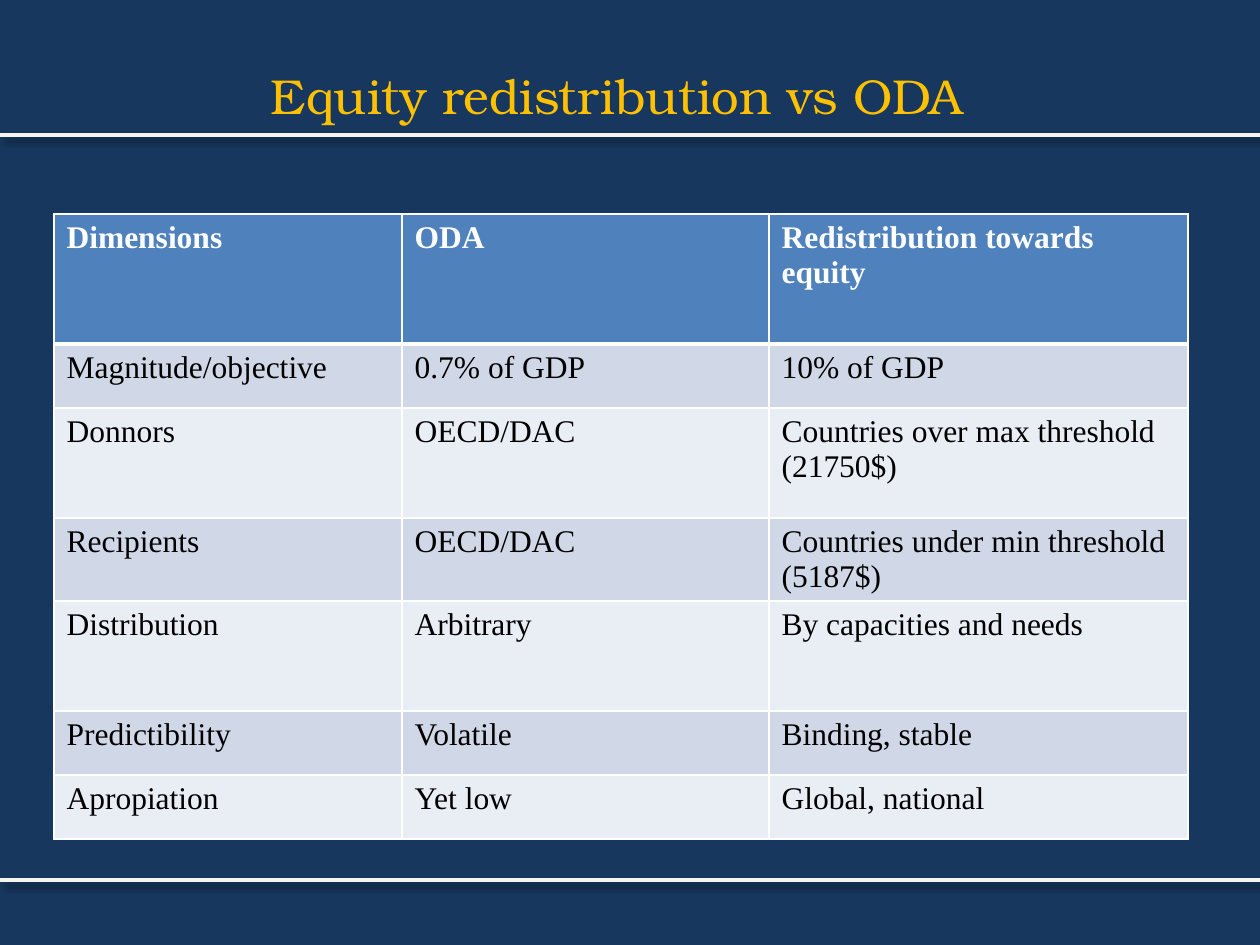
import dataclasses

import lxml.etree
import pptx
import pptx.dml.color
import pptx.enum.shapes
import pptx.enum.text
import pptx.oxml.ns
import pptx.util

RGBColor = pptx.dml.color.RGBColor
NAVY = RGBColor(0x17, 0x37, 0x5E)
IVORY = RGBColor(0xF5, 0xF4, 0xED)
GOLD = RGBColor(0xFF, 0xC0, 0x00)
WHITE = RGBColor(0xFF, 0xFF, 0xFF)
BLACK = RGBColor(0x00, 0x00, 0x00)
HEADER_BLUE = RGBColor(0x4F, 0x81, 0xBD)
BAND_DARK = RGBColor(0xD0, 0xD8, 0xE8)
BAND_LIGHT = RGBColor(0xE9, 0xED, 0xF4)

TITLE_FONT = "TeX Gyre Bonum"
TABLE_FONT = "Times New Roman"
PX_PER_INCH = 126
PAGE_WIDTH = 1260
PAGE_HEIGHT = 945
RULE_TOPS = (880, 135)
COLUMN_WIDTHS = (348, 367, 419)


@dataclasses.dataclass(frozen=True)
class TableRow:
    height: int
    texts: tuple[str, str, str]


@dataclasses.dataclass(frozen=True)
class CellStyle:
    fill: RGBColor
    color: RGBColor
    bold: bool
    top: int
    bottom: int


ROWS = (
    TableRow(130, ("Dimensions", "ODA", "Redistribution towards equity")),
    TableRow(64, ("Magnitude/objective", "0.7% of GDP", "10% of GDP")),
    TableRow(110, ("Donnors", "OECD/DAC", "Countries over max threshold (21750$)")),
    TableRow(83, ("Recipients", "OECD/DAC", "Countries under min threshold (5187$)")),
    TableRow(110, ("Distribution", "Arbitrary", "By capacities and needs")),
    TableRow(64, ("Predictibility", "Volatile", "Binding, stable")),
    TableRow(64, ("Apropiation", "Yet low", "Global, national")),
)


def px(length: int) -> pptx.util.Emu:
    return pptx.util.Emu(round(length * 914400 / PX_PER_INCH))


def add_element(parent, tag: str, **attributes):
    element = lxml.etree.SubElement(parent, pptx.oxml.ns.qn(tag))
    for name, value in attributes.items():
        element.set(name, str(value))
    return element


def add_span(para, text: str, font: str, size: int, color: RGBColor, bold: bool = False) -> None:
    span = para.add_run()
    span.text = text
    span.font.name = font
    span.font.size = pptx.util.Pt(size)
    span.font.color.rgb = color
    span.font.bold = bold


def add_rule(page, top: int) -> None:
    rule = page.shapes.add_connector(
        pptx.enum.shapes.MSO_CONNECTOR.STRAIGHT, px(0), px(top), px(PAGE_WIDTH), px(top)
    )
    rule.line.color.rgb = IVORY
    rule.line.width = pptx.util.Pt(1.75)
    effects = add_element(rule._element.spPr, "a:effectLst")
    shadow = add_element(
        effects, "a:outerShdw", blurRad=50800, dist=50800, dir=2400000, algn="tl", rotWithShape=0
    )
    color = add_element(shadow, "a:srgbClr", val=BLACK)
    add_element(color, "a:alpha", val=40000)


def write_title(page) -> None:
    title = page.shapes.title
    title.left, title.top, title.width, title.height = px(50), px(16), px(1134), px(158)
    title.text_frame.vertical_anchor = pptx.enum.text.MSO_ANCHOR.MIDDLE
    para = title.text_frame.paragraphs[0]
    para.alignment = pptx.enum.text.PP_ALIGN.CENTER
    add_span(para, "Equity redistribution vs ODA", TITLE_FONT, 28, GOLD)


def row_style(index: int) -> CellStyle:
    if index == 0:
        return CellStyle(HEADER_BLUE, WHITE, True, 1, 3)
    band = BAND_DARK if index % 2 else BAND_LIGHT
    return CellStyle(band, BLACK, False, 3 if index == 1 else 1, 1)


def write_cell(cell, text: str, style: CellStyle) -> None:
    properties = cell._tc.get_or_add_tcPr()
    borders = {"a:lnL": 1, "a:lnR": 1, "a:lnT": style.top, "a:lnB": style.bottom}
    for tag, width in borders.items():
        border = add_element(properties, tag, w=pptx.util.Pt(width))
        fill = add_element(border, "a:solidFill")
        add_element(fill, "a:srgbClr", val=WHITE)
    cell.fill.solid()
    cell.fill.fore_color.rgb = style.fill
    add_span(cell.text_frame.paragraphs[0], text, TABLE_FONT, 18, style.color, style.bold)


def add_comparison(page) -> None:
    height = sum(row.height for row in ROWS)
    table = page.shapes.add_table(
        len(ROWS), len(COLUMN_WIDTHS), px(54), px(214), px(sum(COLUMN_WIDTHS)), px(height)
    ).table
    for column, width in zip(table.columns, COLUMN_WIDTHS):
        column.width = px(width)
    for index, row in enumerate(ROWS):
        table.rows[index].height = px(row.height)
        for cell, text in zip(table.rows[index].cells, row.texts):
            write_cell(cell, text, row_style(index))


def main() -> None:
    deck = pptx.Presentation()
    deck.slide_width, deck.slide_height = px(PAGE_WIDTH), px(PAGE_HEIGHT)
    page = deck.slides.add_slide(deck.slide_layouts[5])
    page.background.fill.solid()
    page.background.fill.fore_color.rgb = NAVY
    for top in RULE_TOPS:
        add_rule(page, top)
    write_title(page)
    add_comparison(page)
    deck.save("out.pptx")


if __name__ == "__main__":
    main()
